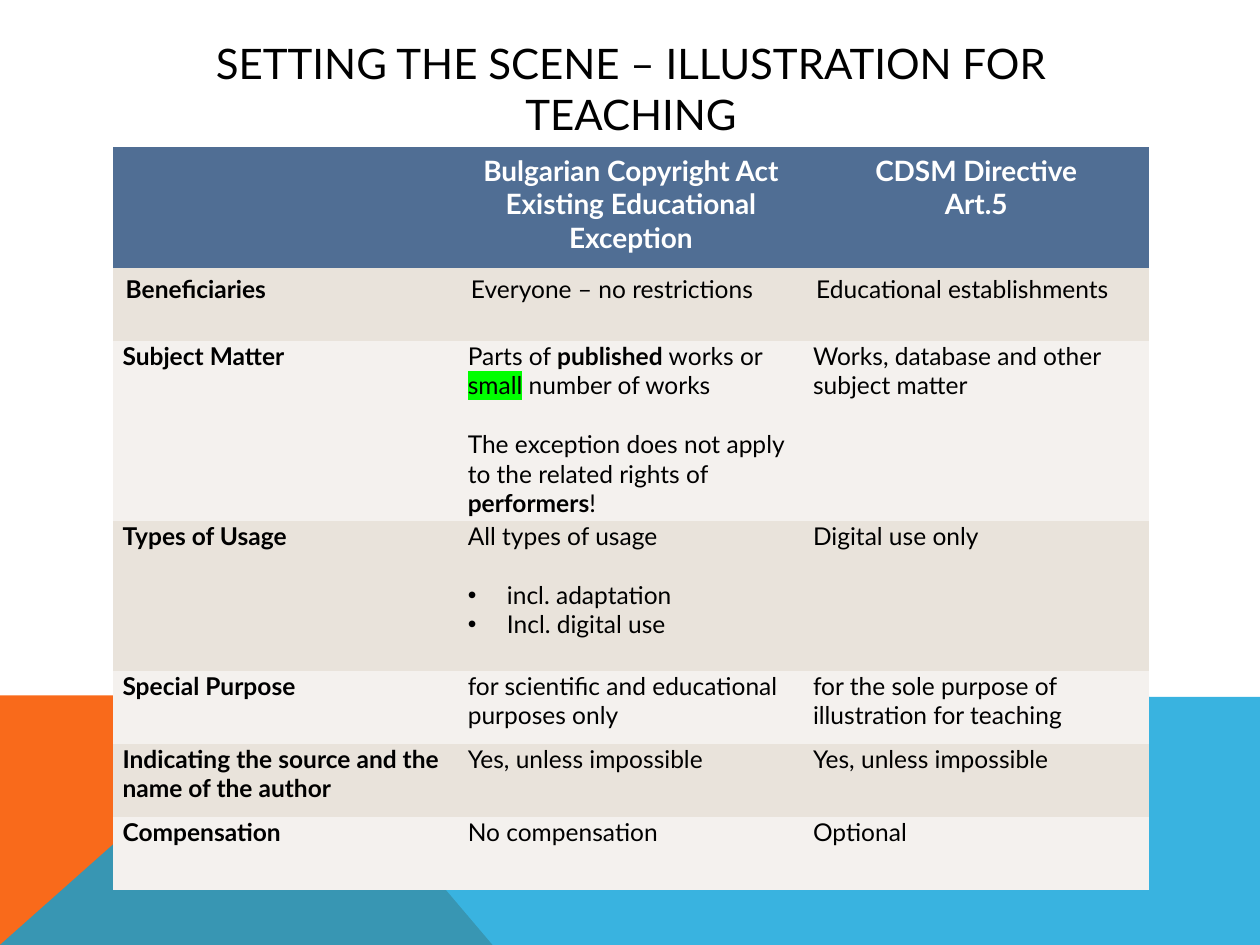
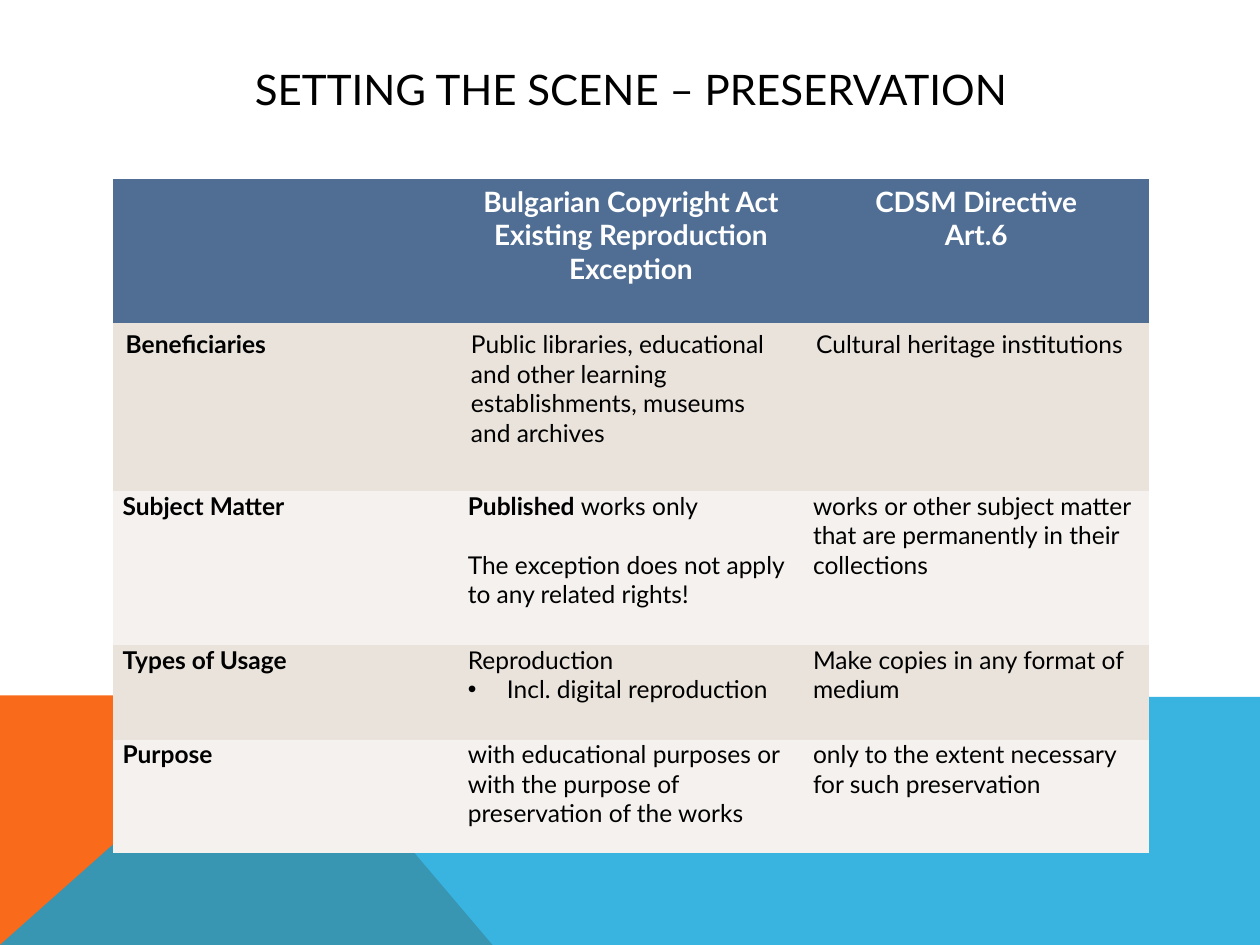
from lxml import etree
from pptx import Presentation
from pptx.dml.color import RGBColor
from pptx.enum.text import MSO_ANCHOR, MSO_AUTO_SIZE, PP_ALIGN
from pptx.oxml.ns import qn
from pptx.util import Cm, Pt

CENTER, LEFT = PP_ALIGN.CENTER, PP_ALIGN.LEFT
MIDDLE, TOP = MSO_ANCHOR.MIDDLE, MSO_ANCHOR.TOP
NO_AUTOFIT = MSO_AUTO_SIZE.NONE

# Content: a cell is a list of paragraphs, a paragraph a list of (text, style) runs.
# A paragraph starting with GAP stands one line lower, with BULLET it is a list item.
GAP, BULLET = "gap", "bullet"
PLAIN, BOLD, MARKED = "plain", "bold", "marked"

COMPARISONS = [
    {
        "title": "SETTING THE SCENE – ILLUSTRATION FOR TEACHING",
        "top": 2.97,
        "heads": [
            [],
            ["Bulgarian Copyright Act", "Existing Educational Exception"],
            ["CDSM Directive", "Art.5"],
        ],
        "head_height": 2.44,
        "rows": [
            (1.47, "Beneficiaries", ["Everyone – no restrictions"],
             ["Educational establishments"]),
            (3.63, "Subject Matter",
             [[("Parts of ", PLAIN), ("published", BOLD), (" works or ", PLAIN),
               ("small", MARKED), (" number of works", PLAIN)],
              [GAP, ("The exception does not apply to the related rights of ", PLAIN),
               ("performers", BOLD), ("!", PLAIN)]],
             ["Works, database and other subject matter"]),
            (3.02, "Types of Usage",
             ["All types of usage",
              [GAP, BULLET, ("incl. adaptation", PLAIN)],
              [BULLET, ("Incl. digital use", PLAIN)]],
             ["Digital use only"]),
            (1.47, "Special Purpose", ["for scientific and educational purposes only"],
             ["for the sole purpose of illustration for teaching"]),
            (1.47, "Indicating the source and the name of the author",
             ["Yes, unless impossible"], ["Yes, unless impossible"]),
            (1.47, "Compensation", ["No compensation"], ["Optional"]),
        ],
    },
    {
        "title": "SETTING THE SCENE – PRESERVATION",
        "top": 3.6,
        "heads": [
            [],
            ["Bulgarian Copyright Act", "Existing Reproduction", "Exception"],
            ["CDSM Directive", "Art.6"],
        ],
        "head_height": 2.92,
        "rows": [
            (3.38, "Beneficiaries",
             ["Public libraries, educational and other learning establishments, "
              "museums and archives"],
             ["Cultural heritage institutions"]),
            (3.1, "Subject Matter",
             [[("Published ", BOLD), ("works only", PLAIN)],
              [GAP, ("The exception does not apply to any related rights!", PLAIN)]],
             ["works or other subject matter that are permanently in their collections"]),
            (1.91, "Types of Usage",
             ["Reproduction", [BULLET, ("Incl. digital reproduction", PLAIN)]],
             ["Make copies in any format of medium"]),
            (2.29, "Purpose",
             ["with educational purposes or with the purpose of preservation of the works"],
             ["only to the extent necessary for such preservation"]),
        ],
    },
]

# Shared look
FONT = "Lato"
BLACK, WHITE, GREEN = "000000", "FFFFFF", "00FF00"
HEAD_FILL, ROW_FILLS = "506E94", ("E9E3DB", "F4F1EE")
TITLE_SIZE, HEAD_SIZE, BODY_SIZE = 24, 16, 14
LINE_GAP = 1.2 * BODY_SIZE
WIDTH, HEIGHT = 25.4, 19.05
MARGIN, TABLE_WIDTH = 2.28, 20.88
BAND_TOP = 14.02
BANDS = [  # fill, opacity in percent, corners in cm
    ("F96A1B", 100, [(0, HEIGHT), (0, BAND_TOP), (5.66, BAND_TOP), (9.93, HEIGHT)]),
    ("08A1D9", 80, [(0, HEIGHT), (5.66, BAND_TOP), (WIDTH, 14.05), (WIDTH, HEIGHT)]),
]
PLAIN_TABLE_STYLE = "{2D5ABB26-0587-4C30-8999-92F81FD0307C}"


def paint(fill, color):
    fill.solid()
    fill.fore_color.rgb = RGBColor.from_string(color)


def add_run(paragraph, text, size, color, bold=False):
    run = paragraph.add_run()
    run.text = text
    run.font.size, run.font.bold, run.font.name = Pt(size), bold, FONT
    paint(run.font.fill, color)
    return run


def highlight(run, color):
    mark = etree.Element(qn("a:highlight"))
    etree.SubElement(mark, qn("a:srgbClr"), val=color)
    run.font.fill  # the highlight follows the text fill
    run._r.get_or_add_rPr().insert(1, mark)


def make_bullet(paragraph):
    props = paragraph._p.get_or_add_pPr()
    props.set("marL", str(Cm(0.79)))
    props.set("indent", str(-Cm(0.79)))
    etree.SubElement(props, qn("a:buFont"), typeface="Arial")
    etree.SubElement(props, qn("a:buChar"), char="•")


def fill_cell(cell, paragraphs, fill, size, color, bold=False, align=LEFT):
    paint(cell.fill, fill)
    cell.vertical_anchor = TOP
    frame = cell.text_frame
    for index, content in enumerate(paragraphs):
        paragraph = frame.add_paragraph() if index else frame.paragraphs[0]
        paragraph.alignment = align
        parts = [(content, PLAIN)] if isinstance(content, str) else content
        if GAP in parts:
            paragraph.space_before = Pt(LINE_GAP)
        if BULLET in parts:
            make_bullet(paragraph)
        for text, style in (part for part in parts if part not in (GAP, BULLET)):
            run = add_run(paragraph, text, size, color, bold or style == BOLD)
            if style == MARKED:
                highlight(run, GREEN)


def add_bands(slide, layout):
    """Draw the bottom bands and move them behind everything on the layout."""
    for order, (color, opacity, corners) in enumerate(BANDS):
        points = [(Cm(x), Cm(y)) for x, y in corners]
        builder = slide.shapes.build_freeform(*points[0])
        builder.add_line_segments(points[1:], close=True)
        band = builder.convert_to_shape()
        band.shadow.inherit = False
        band.line.fill.background()
        paint(band.fill, color)
        if opacity < 100:
            tint = band.element.spPr.find(".//" + qn("a:srgbClr"))
            etree.SubElement(tint, qn("a:alpha"), val=str(opacity * 1000))
        layout.shapes.element.insert(2 + order, band.element)


def add_title(slide, text):
    title = slide.shapes.title
    title.left, title.top = Cm(MARGIN), Cm(1.02)
    title.width, title.height = Cm(TABLE_WIDTH), Cm(1.52)
    frame = title.text_frame
    frame.auto_size, frame.word_wrap = NO_AUTOFIT, True
    frame.vertical_anchor = MIDDLE
    frame.paragraphs[0].alignment = CENTER
    add_run(frame.paragraphs[0], text, TITLE_SIZE, BLACK)


def add_comparison(slide, comparison):
    heads, rows = comparison["heads"], comparison["rows"]
    heights = [comparison["head_height"]] + [row[0] for row in rows]
    frame = slide.shapes.add_table(
        len(heights), len(heads), Cm(MARGIN), Cm(comparison["top"]),
        Cm(TABLE_WIDTH), Cm(sum(heights)))
    frame.element.find(".//" + qn("a:tableStyleId")).text = PLAIN_TABLE_STYLE
    table = frame.table
    table.horz_banding = False
    for row, height in zip(table.rows, heights):
        row.height = Cm(height)

    # Header row
    for column, lines in enumerate(heads):
        fill_cell(table.cell(0, column), lines, HEAD_FILL, HEAD_SIZE, WHITE, True, CENTER)

    # Body rows; those below the first one have tight margins
    for number, (_, topic, *answers) in enumerate(rows, 1):
        fill = ROW_FILLS[(number - 1) % 2]
        for column, paragraphs in enumerate([[topic], *answers]):
            cell = table.cell(number, column)
            fill_cell(cell, paragraphs, fill, BODY_SIZE, BLACK, bold=column == 0)
            if number > 1:
                cell.margin_left = cell.margin_right = Cm(0.19)
                cell.margin_top = cell.margin_bottom = 0


def main():
    deck = Presentation()
    deck.slide_width, deck.slide_height = Cm(WIDTH), Cm(HEIGHT)
    layout = deck.slide_layouts.get_by_name("Title Only")
    paint(layout.background.fill, WHITE)
    for comparison in COMPARISONS:
        slide = deck.slides.add_slide(layout)
        add_title(slide, comparison["title"])
        add_comparison(slide, comparison)
    add_bands(deck.slides[0], layout)
    deck.save("out.pptx")


if __name__ == "__main__":
    main()
